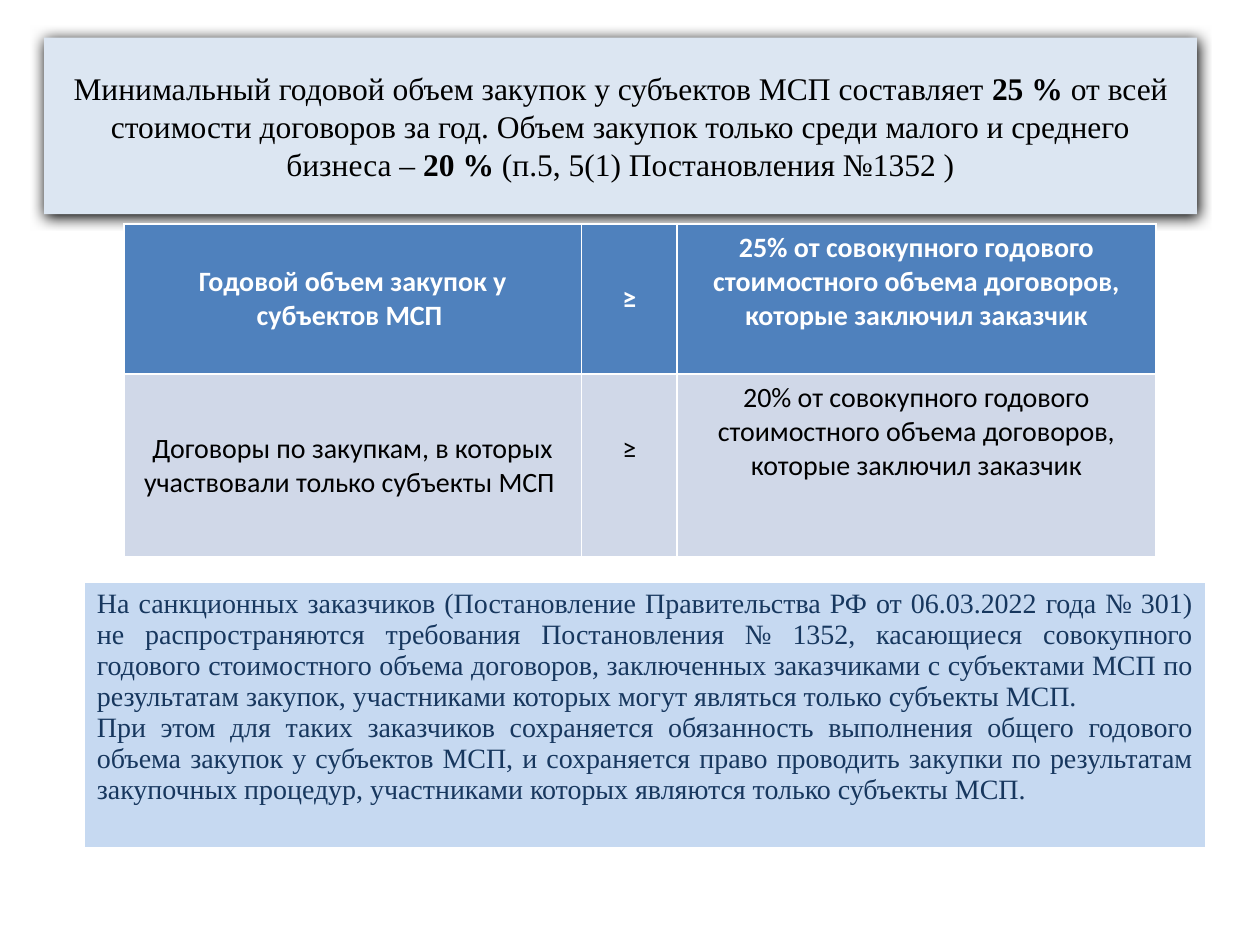
from dataclasses import dataclass

from lxml import etree
from pptx import Presentation, util as u
from pptx.dml.color import RGBColor
from pptx.enum import text
from pptx.oxml import ns


@dataclass(frozen=True)
class Theme:
    serif: str = "Times New Roman"
    sans: str = "Calibri"
    black: str = "000000"
    white: str = "FFFFFF"
    navy: str = "17375E"
    banner: str = "DCE6F2"
    head: str = "4F81BD"
    band: str = "D0D8E8"
    note: str = "C6D9F1"
    title: int = 18
    body: int = 16


T = Theme()
MID, TOP = text.MSO_ANCHOR.MIDDLE, text.MSO_ANCHOR.TOP
CENTER, JUST = text.PP_ALIGN.CENTER, text.PP_ALIGN.JUSTIFY


def paint(part, color):
    part.fill.solid()
    part.fill.fore_color.rgb = RGBColor.from_string(color)


def style(para, face, size, color, align, bold=None):
    para.alignment = align
    font = para.font
    font.name, font.size, font.bold = face, u.Pt(size), bold
    font.color.rgb = RGBColor.from_string(color)


def shade(shape):
    """Soft dark shadow just below the shape."""
    effects = etree.SubElement(shape._element.spPr, ns.qn("a:effectLst"))
    outer = etree.SubElement(effects, ns.qn("a:outerShdw"), blurRad=str(u.Pt(8.5)),
                             dist=str(u.Pt(1)), dir="5400000", rotWithShape="0")
    etree.SubElement(outer, ns.qn("a:srgbClr"), val=T.black)


def add_grid(slide, box, cols, rows):
    left, top = box
    frame = slide.shapes.add_table(len(rows), len(cols), u.Cm(left), u.Cm(top),
                                   u.Cm(sum(cols)), u.Cm(sum(rows)))
    grid = frame.table
    grid.horz_banding = False
    for col, width in zip(grid.columns, cols):
        col.width = u.Cm(width)
    for row, height in zip(grid.rows, rows):
        row.height = u.Cm(height)
    return grid


def add_title(slide, box, parts):
    title = slide.shapes.title
    title.left, title.top, title.width, title.height = map(u.Cm, box)
    paint(title, T.banner)
    shade(title)
    frame = title.text_frame
    frame.word_wrap, frame.vertical_anchor = True, MID
    para = frame.paragraphs[0]
    style(para, T.serif, T.title, T.black, CENTER)
    for words, bold in parts:
        run = para.add_run()
        run.text, run.font.bold = words, bold


def add_quotas(slide, box, cols, rows, data):
    grid = add_grid(slide, box, cols, rows)
    looks = [(T.head, T.white, True), (T.band, T.black, False)]
    for r, (line, (fill, color, bold)) in enumerate(zip(data, looks)):
        for c, words in enumerate(line):
            cell = grid.cell(r, c)
            paint(cell, fill)
            cell.text = words
            cell.vertical_anchor = TOP if c == 2 else MID
            style(cell.text_frame.paragraphs[0], T.sans, T.body, color, CENTER, bold)
    # The lower sign sits half a line above the middle
    grid.cell(1, 1).margin_bottom = u.Cm(0.8)


def add_note(slide, box, width, height, paras):
    grid = add_grid(slide, box, [width], [height])
    cell = grid.cell(0, 0)
    paint(cell, T.note)
    cell.text = "\n".join(paras)
    for para in cell.text_frame.paragraphs:
        style(para, T.serif, T.body, T.navy, JUST, False)


def main():
    deck = Presentation()
    deck.slide_width, deck.slide_height = u.Cm(25.4), u.Cm(19.05)
    slide = deck.slides.add_slide(deck.slide_layouts[5])

    # Headline banner
    add_title(slide, (0.89, 0.76, 23.24, 3.56), [
        ("Минимальный годовой объем закупок у субъектов МСП составляет ", False),
        ("25 % ", True),
        ("от всей стоимости договоров за год. Объем закупок только среди "
         "малого и среднего бизнеса – ", False),
        ("20 %", True),
        (" (п.5, 5(1) Постановления №1352 )", False),
    ])

    # Quota table
    share = ("{}% от совокупного годового стоимостного объема договоров, "
             "которые заключил заказчик")
    add_quotas(slide, (2.5, 4.52), [9.22, 1.93, 9.65], [3.02, 3.69], [
        ("Годовой объем закупок у субъектов МСП ", "≥", share.format(25)),
        ("Договоры по закупкам, в которых участвовали только субъекты МСП ",
         "≥", share.format(20)),
    ])

    # Note on exempt customers
    add_note(slide, (1.7, 11.73), 22.61, 5.36, [
        "На санкционных заказчиков (Постановление Правительства РФ от 06.03.2022 "
        "года № 301) не распространяются требования Постановления № 1352, "
        "касающиеся совокупного годового стоимостного объема договоров, "
        "заключенных заказчиками с субъектами МСП по результатам закупок, "
        "участниками которых могут являться только субъекты МСП. ",
        "При этом для таких заказчиков сохраняется обязанность выполнения общего "
        "годового объема закупок у субъектов МСП, и сохраняется право проводить "
        "закупки по результатам закупочных процедур, участниками которых "
        "являются только субъекты МСП.",
    ])

    deck.save("out.pptx")


if __name__ == "__main__":
    main()
